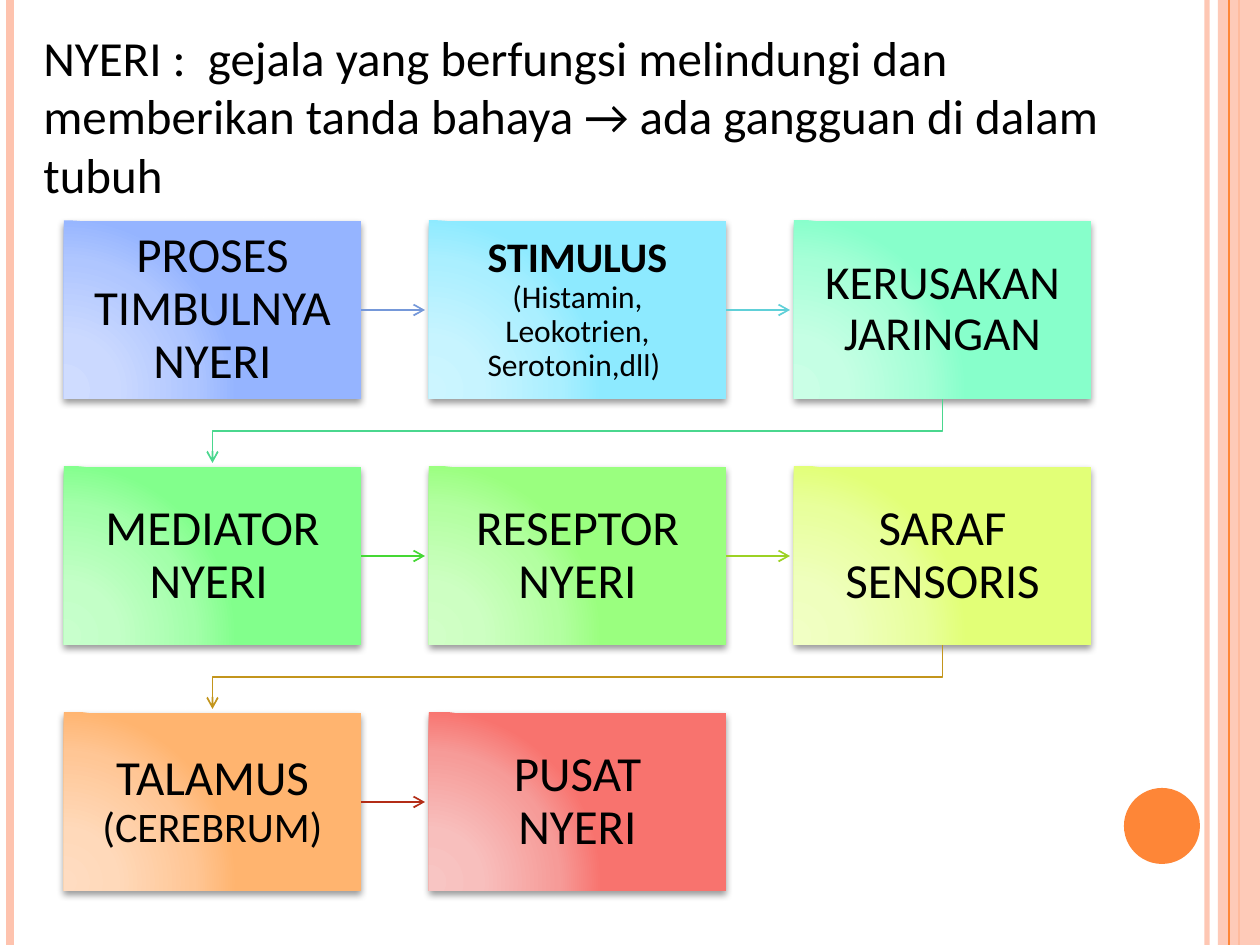
import lxml.etree
import pptx
import pptx.dml.color
import pptx.enum.shapes
import pptx.enum.text
import pptx.oxml
import pptx.oxml.ns
import pptx.util
from dataclasses import dataclass

EMU_PER_PX = 914400 / 126
SHAPE = pptx.enum.shapes.MSO_SHAPE
qn = pptx.oxml.ns.qn


@dataclass(frozen=True)
class Theme:
    font: str = "Calibri"
    text: str = "000000"
    accent: str = "FE8637"
    pale: str = "FEC3AE"
    title: int = 28
    large: int = 28
    medium: int = 27
    label: int = 24
    small: int = 18
    arrow: int = 1


THEME = Theme()

STEPS = [
    ([("PROSES TIMBULNYA NYERI", THEME.large, False)], 28,
     ("CFDCFF", "CBD9FF", "AFC6FF", "95B4FF"), "7598D9"),
    ([("STIMULUS ", THEME.label, True),
      ("(Histamin, Leokotrien, Serotonin,dll) ", THEME.small, False)], 24,
     ("CCF5FF", "C7F4FF", "AAEFFF", "8DEAFF"), "60D0D8"),
    ([("KERUSAKAN JARINGAN", THEME.medium, False)], 27,
     ("CAFFE6", "C5FFE4", "A6FFD7", "87FFCB"), "4AD78E"),
    ([("MEDIATOR NYERI\t", THEME.large, False)], 28,
     ("C8FFCC", "C3FFC7", "A3FFAA", "82FF8C"), "45D834"),
    ([("RESEPTOR NYERI", THEME.large, False)], 28,
     ("D1FFC7", "CDFFC2", "B3FFA1", "9AFF7F"), "9CD224"),
    ([("SARAF SENSORIS", THEME.large, False)], 28,
     ("F1FFC4", "EFFFBE", "E8FF9C", "E2FF77"), "C3951C"),
    ([("TALAMUS ", THEME.large, False), ("(CEREBRUM)", THEME.label, False)], 28,
     ("FFDCC1", "FFD9BA", "FFC695", "FFB46F"), "B32C16"),
    ([("PUSAT NYERI", THEME.large, False)], 28,
     ("F8C5C3", "F8BFBD", "F69B98", "F8736E"), None),
]


def px(n):
    return pptx.util.Emu(round(n * EMU_PER_PX))


def rgb(value):
    return pptx.dml.color.RGBColor.from_string(value)


def set_alpha(fill, percent):
    clr = fill._xPr.find(".//" + qn("a:srgbClr"))
    lxml.etree.SubElement(clr, qn("a:alpha")).set("val", str(percent * 1000))


def add_text(p, text, size, bold=False):
    r = p.add_run()
    r.text = text
    r.font.name = THEME.font
    r.font.size = pptx.util.Pt(size)
    r.font.bold = bold
    r.font.color.rgb = rgb(THEME.text)


def style_line(sp, color, width, arrow=False):
    sp.line.color.rgb = rgb(color)
    sp.line.width = pptx.util.Pt(width)
    if arrow:
        ln = sp.line._get_or_add_ln()
        lxml.etree.SubElement(ln, qn("a:tailEnd")).set("type", "arrow")


def add_line(s, x1, y1, x2, y2, color, width, arrow=False):
    sp = s.shapes.add_connector(pptx.enum.shapes.MSO_CONNECTOR.STRAIGHT,
                                px(x1), px(y1), px(x2), px(y2))
    style_line(sp, color, width, arrow)
    lxml.etree.SubElement(sp._element.spPr, qn("a:effectLst"))
    return sp


def add_plain(s, shape, x, y, w, h, color):
    sp = s.shapes.add_shape(shape, px(x), px(y), px(w), px(h))
    sp.shadow.inherit = False
    sp.fill.solid()
    sp.fill.fore_color.rgb = rgb(color)
    sp.line.fill.background()
    return sp


def add_frame(s, x, y, w, h):
    right, bottom = x + w, y + h
    stripe = add_line(s, right - 53, y, right - 53, bottom, THEME.pale, 3)
    set_alpha(stripe.line.fill, 93)
    add_line(s, x + 10, y, x + 10, bottom, THEME.pale, 4.5)
    add_line(s, right - 21, y, right - 21, bottom, THEME.accent, 1.5)
    band = add_plain(s, SHAPE.RECTANGLE, right - 42, y, 42, h, THEME.pale)
    set_alpha(band.fill, 87)
    add_line(s, right - 31, y, right - 31, bottom, THEME.accent, 0.75)
    add_plain(s, SHAPE.OVAL, right - 136, bottom - 157, 76, 76, THEME.accent)


def add_title(s, x, y, w, h):
    tf = s.shapes.add_textbox(px(x), px(y), px(w), px(h)).text_frame
    tf.word_wrap = True
    add_text(tf.paragraphs[0],
             "NYERI :  gejala yang berfungsi melindungi dan memberikan "
             "tanda bahaya → ada gangguan di dalam tubuh", THEME.title)


def set_gradient(sp, colors):
    stops = "".join(f'<a:gs pos="{pos}000"><a:srgbClr val="{color}"/></a:gs>'
                    for pos, color in zip((0, 30, 75, 100), colors))
    grad = pptx.oxml.parse_xml(
        f'<a:gradFill {pptx.oxml.ns.nsdecls("a")} rotWithShape="1">'
        f'<a:gsLst>{stops}</a:gsLst><a:path path="circle">'
        '<a:fillToRect l="5000" t="100000" r="120000" b="10000"/>'
        '</a:path></a:gradFill>')
    solid = sp._element.spPr.find(qn("a:solidFill"))
    solid.getparent().replace(solid, grad)


def set_shadow(sp):
    effects = sp._element.spPr.find(qn("a:effectLst"))
    effects.append(pptx.oxml.parse_xml(
        f'<a:outerShdw {pptx.oxml.ns.nsdecls("a")} blurRad="50800" '
        'dist="25400" dir="5400000" rotWithShape="0">'
        '<a:srgbClr val="000000"><a:alpha val="40000"/></a:srgbClr>'
        '</a:outerShdw>'))


def add_step(s, x, y, w, h, runs, inset, colors):
    sp = add_plain(s, SHAPE.RECTANGLE, x, y, w, h, colors[-1])
    set_gradient(sp, colors)
    set_shadow(sp)
    tf = sp.text_frame
    tf.word_wrap = True
    tf.vertical_anchor = pptx.enum.text.MSO_ANCHOR.MIDDLE
    tf.margin_left = tf.margin_right = px(inset)
    tf.margin_top = tf.margin_bottom = px(inset)
    p = tf.paragraphs[0]
    p.alignment = pptx.enum.text.PP_ALIGN.CENTER
    p.line_spacing = 0.9
    for text, size, bold in runs:
        add_text(p, text, size, bold)
    return sp


def add_return_arrow(s, x1, y1, x2, y2, color):
    middle = (y1 + y2) / 2
    fb = s.shapes.build_freeform(px(x1), px(y1))
    fb.add_line_segments([(px(x1), px(middle)), (px(x2), px(middle)),
                          (px(x2), px(y2))], close=False)
    sp = fb.convert_to_shape()
    sp.shadow.inherit = False
    sp.fill.background()
    style_line(sp, color, THEME.arrow, arrow=True)


def add_flow(s, x, y, w, h, columns=3, rows=3, gap=68, clearance=4):
    box_w = (w - (columns - 1) * gap) / columns
    box_h = (h - (rows - 1) * gap) / rows
    for i, (runs, inset, colors, arrow) in enumerate(STEPS):
        row, column = divmod(i, columns)
        left = x + column * (box_w + gap)
        top = y + row * (box_h + gap)
        sp = add_step(s, left, top, box_w, box_h, runs, inset, colors)
        if arrow is None:
            continue
        right, bottom = left + box_w, top + box_h
        if column < columns - 1:
            middle = top + box_h / 2
            line = add_line(s, right, middle, right + gap - clearance, middle,
                            arrow, THEME.arrow, arrow=True)
            line.begin_connect(sp, 3)
        else:
            add_return_arrow(s, left + box_w / 2, bottom, x + box_w / 2,
                             bottom + gap - clearance, arrow)


def main():
    prs = pptx.Presentation()
    prs.slide_width, prs.slide_height = px(1260), px(945)
    s = prs.slides.add_slide(prs.slide_layouts[6])
    add_frame(s, 0, 0, 1260, 945)
    add_flow(s, 64, 221, 1027, 670)
    add_title(s, 31, 21, 1176, 190)
    prs.save("out.pptx")


if __name__ == "__main__":
    main()
